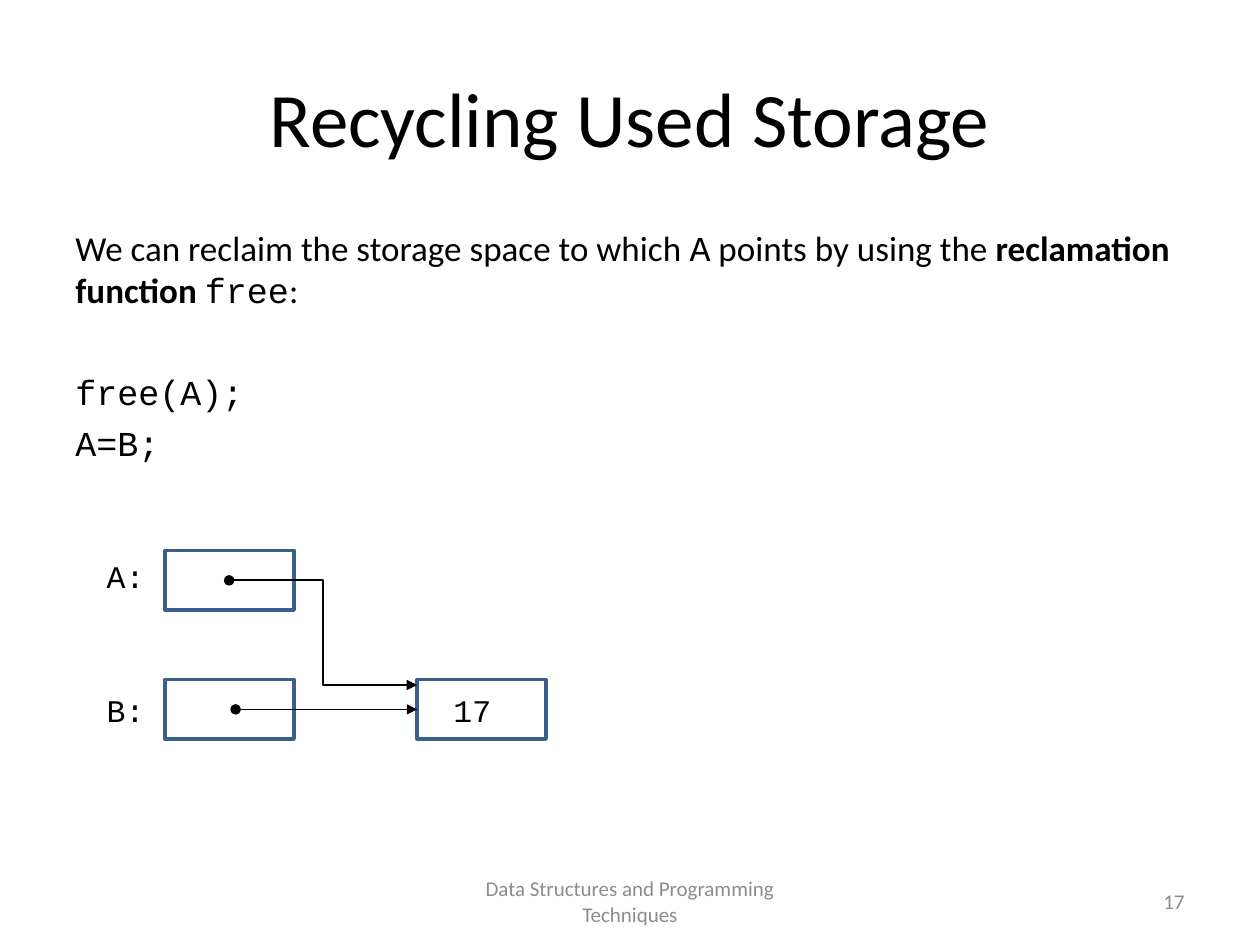
from dataclasses import dataclass

import lxml.etree
import pptx
import pptx.dml.color
import pptx.enum.shapes
import pptx.enum.text
import pptx.oxml.ns
import pptx.util

Cm = pptx.util.Cm
Pt = pptx.util.Pt
Align = pptx.enum.text.PP_ALIGN
Anchor = pptx.enum.text.MSO_ANCHOR
Wire = pptx.enum.shapes.MSO_CONNECTOR
qn = pptx.oxml.ns.qn


@dataclass(frozen=True)
class Theme:
    sans: str = "Calibri"
    mono: str = "Courier New"
    ink: str = "000000"
    muted: str = "8C8C8C"
    border: str = "3A5F8C"
    title: int = 44
    body: int = 20
    label: int = 18
    footer: int = 12


THEME = Theme()


def add_span(para, text, *, font=THEME.sans, size=THEME.body, color=THEME.ink, bold=False):
    """Append one formatted run to a paragraph."""
    span = para.add_run()
    span.text = text
    span.font.name = font
    span.font.size = Pt(size)
    span.font.bold = bold
    span.font.color.rgb = pptx.dml.color.RGBColor.from_string(color)


class SlideBuilder:
    def __init__(self, page, theme):
        self.page = page
        self.theme = theme

    def text(self, left, top, width, height, paras, *, align=Align.LEFT,
             anchor=Anchor.TOP, **style):
        """Add a text box; each paragraph is (space before, [(text, format), ...])."""
        box = self.page.shapes.add_textbox(Cm(left), Cm(top), Cm(width), Cm(height))
        frame = box.text_frame
        frame.word_wrap = True
        frame.vertical_anchor = anchor
        for index, (space, spans) in enumerate(paras):
            para = frame.add_paragraph() if index else frame.paragraphs[0]
            para.alignment = align
            para.space_before = Pt(space)
            for content, extra in spans:
                add_span(para, content, **{**style, **extra})
        return box

    def line_of_text(self, left, top, width, height, content, **style):
        return self.text(left, top, width, height, [(0, [(content, {})])], **style)

    def label(self, left, top, content):
        return self.line_of_text(left, top, 1.6, 1.02, content,
                                 font=self.theme.mono, size=self.theme.label)

    def cell(self, left, top):
        """Add an outlined memory cell."""
        box = self.page.shapes.add_shape(
            pptx.enum.shapes.MSO_SHAPE.RECTANGLE, Cm(left), Cm(top), Cm(2.6), Cm(1.2))
        box.shadow.inherit = False
        box.fill.background()
        box.line.color.rgb = pptx.dml.color.RGBColor.from_string(self.theme.border)
        box.line.width = Pt(2)
        return box

    def pointer(self, kind, start, end):
        """Add a wire with a dot at its start and an arrowhead at its end."""
        wire = self.page.shapes.add_connector(kind, *map(Cm, start + end))
        wire.line.color.rgb = pptx.dml.color.RGBColor.from_string(self.theme.ink)
        wire.line.width = Pt(1)
        outline = wire.line._get_or_add_ln()
        for tag, shape in (("a:headEnd", "oval"), ("a:tailEnd", "triangle")):
            lxml.etree.SubElement(outline, qn(tag), type=shape)
        lxml.etree.SubElement(wire._element.spPr, qn("a:effectLst"))
        return wire


def main():
    deck = pptx.Presentation()
    deck.slide_width, deck.slide_height = Cm(25.4), Cm(19.05)
    page = deck.slides.add_slide(deck.slide_layouts[6])
    build = SlideBuilder(page, THEME)
    mono = {"font": THEME.mono}

    # Title
    build.line_of_text(1.27, 0.76, 22.86, 3.18, "Recycling Used Storage",
                       size=THEME.title, align=Align.CENTER, anchor=Anchor.MIDDLE)

    # Explanation and code
    build.text(1.27, 4.45, 22.86, 12.57, [
        (0, [("We can reclaim the storage space to which ", {}),
             ("A", mono),
             (" points by using the ", {}),
             ("reclamation function ", {"bold": True}),
             ("free", mono),
             (":", {})]),
        (34, [("free(A);", mono)]),
        (5, [("A=B;", mono)]),
    ])

    # Memory cells
    row_a, row_b = 11.1, 13.7
    pointer_left, value_left = 3.33, 8.41
    build.cell(pointer_left, row_a)
    build.cell(pointer_left, row_b)
    value_cell = build.cell(value_left, row_b)

    # Pointers
    middle = 0.6
    straight = build.pointer(Wire.STRAIGHT, (4.75, row_b + middle),
                             (value_left, row_b + middle))
    straight.end_connect(value_cell, 1)
    build.pointer(Wire.ELBOW, (4.62, row_a + middle), (value_left, row_b + 0.11))

    # Labels
    build.label(1.9, row_a, "A:")
    build.label(1.9, 13.81, "B:")
    build.label(8.89, 13.81, "17")

    # Footer
    footer = {"size": THEME.footer, "color": THEME.muted, "anchor": Anchor.MIDDLE}
    build.line_of_text(8.68, 17.66, 8.04, 1.01,
                       "Data Structures and Programming Techniques",
                       align=Align.CENTER, **footer)
    build.line_of_text(18.2, 17.66, 5.93, 1.01, "17", align=Align.RIGHT, **footer)

    deck.save("out.pptx")


if __name__ == "__main__":
    main()
